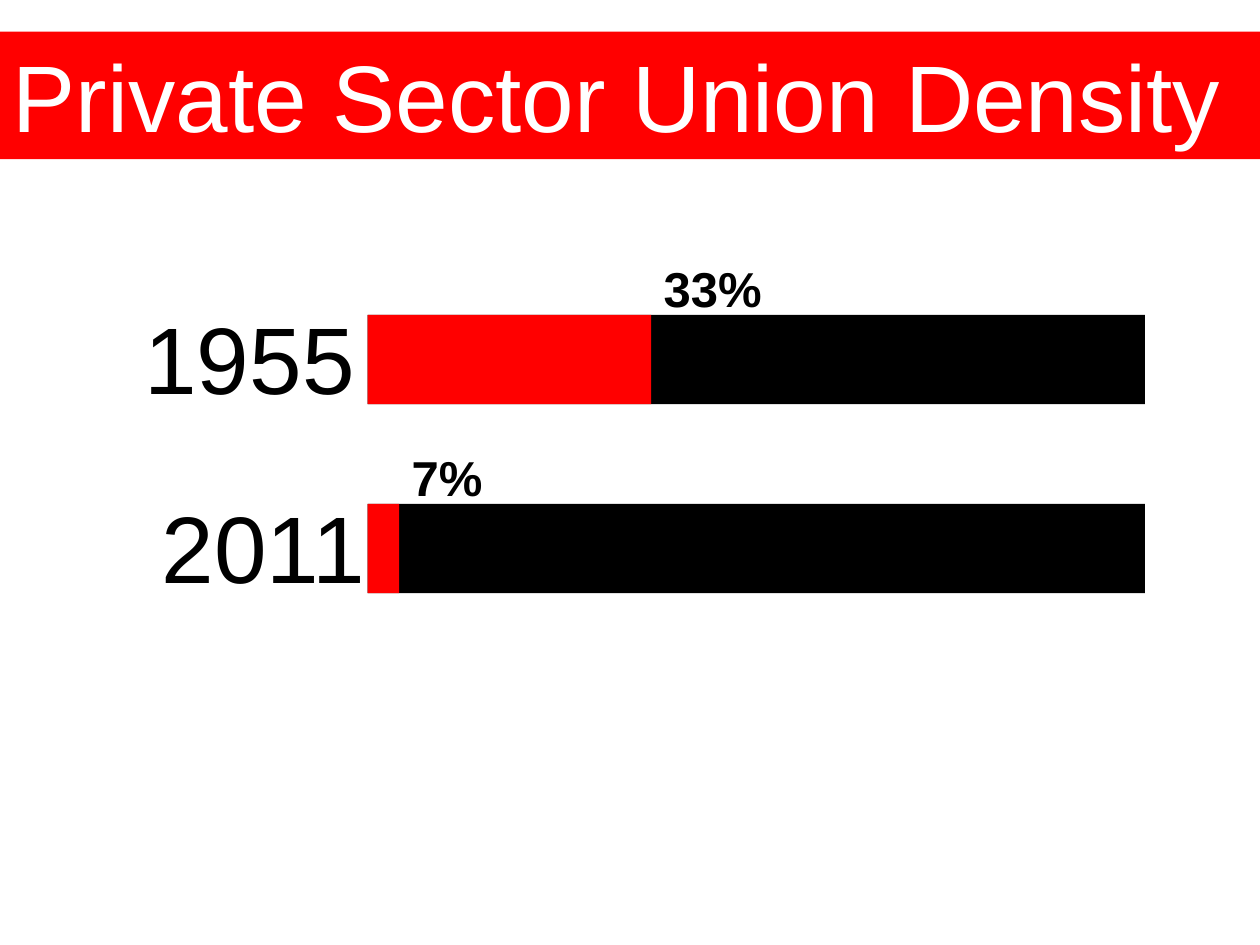
from pptx import Presentation
from pptx.dml.color import RGBColor
from pptx.enum.shapes import MSO_SHAPE as Shape
from pptx.enum.text import MSO_ANCHOR as Anchor, MSO_AUTO_SIZE as AutoSize, PP_ALIGN as Align
from pptx.util import Cm, Pt

RED = RGBColor(0xFF, 0x00, 0x00)
BLACK = RGBColor(0x00, 0x00, 0x00)
WHITE = RGBColor(0xFF, 0xFF, 0xFF)

BAR_LEFT = Cm(7.41)
BAR_WIDTH = Cm(15.67)
BAR_HEIGHT = Cm(1.8)
FIRST_BAR_TOP = Cm(6.35)
BAR_PITCH = Cm(3.81)
DENSITIES = [
    ("1955", "33%", Cm(5.72), Cm(1.9)),
    ("2011", "7%", Cm(0.64), Cm(2.11)),
]


def write(frame, text, size, color, align, bold=False):
    frame.word_wrap = True
    frame.auto_size = AutoSize.NONE
    frame.vertical_anchor = Anchor.TOP
    frame.text = text
    paragraph = frame.paragraphs[0]
    paragraph.alignment = align
    font = paragraph.runs[0].font
    font.name = "Arial"
    font.size = Pt(size)
    font.bold = bold
    font.color.rgb = color


def add_title(slide, text):
    title = slide.shapes.title
    title.left, title.top = Cm(0), Cm(0.64)
    title.width, title.height = Cm(25.4), Cm(2.57)
    title.fill.solid()
    title.fill.fore_color.rgb = RED
    write(title.text_frame, text, 54, WHITE, Align.CENTER)


def add_label(slide, text, left, top, width, height, size, align, bold=False):
    label = slide.shapes.add_textbox(left, top, width, height)
    write(label.text_frame, text, size, BLACK, align, bold)


def add_bar(slide, top, width, color):
    bar = slide.shapes.add_shape(Shape.RECTANGLE, BAR_LEFT, top, width, BAR_HEIGHT)
    bar.shadow.inherit = False
    bar.fill.solid()
    bar.fill.fore_color.rgb = color
    bar.line.fill.background()


def add_density(slide, top, year, share, union_width, year_left):
    add_label(slide, year, year_left, top - Cm(0.43), Cm(5.5), Cm(2.57), 54, Align.RIGHT)
    add_bar(slide, top, BAR_WIDTH, BLACK)
    add_bar(slide, top, union_width, RED)
    add_label(slide, share, BAR_LEFT + union_width, top - Cm(1.27),
              Cm(3.18), Cm(1.45), 28, Align.LEFT, bold=True)


def main():
    deck = Presentation()
    deck.slide_width, deck.slide_height = Cm(25.4), Cm(19.05)
    slide = deck.slides.add_slide(deck.slide_layouts[5])
    add_title(slide, "Private Sector Union Density ")
    for row, (year, share, union_width, year_left) in enumerate(DENSITIES):
        add_density(slide, FIRST_BAR_TOP + row * BAR_PITCH, year, share, union_width, year_left)
    deck.save("out.pptx")


if __name__ == "__main__":
    main()
